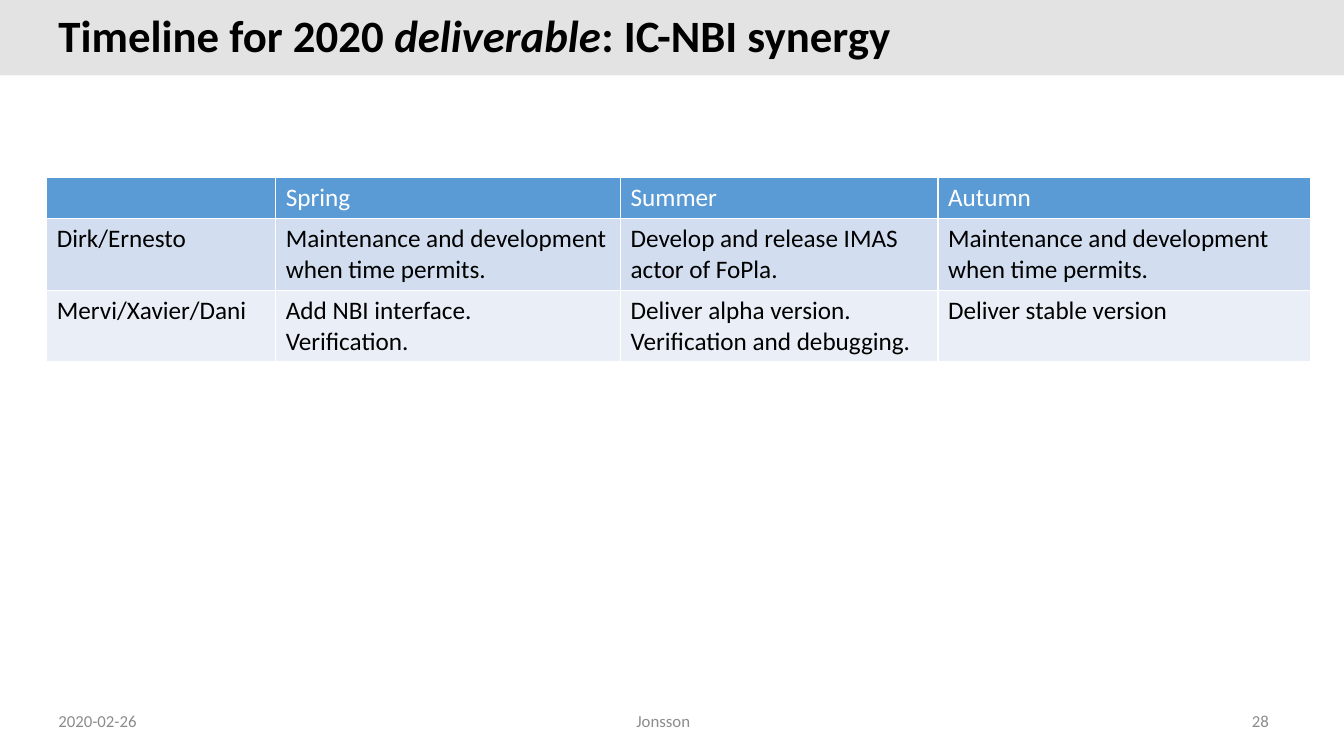
from dataclasses import dataclass

from pptx import Presentation
from pptx.dml.color import RGBColor
from pptx.enum.shapes import MSO_SHAPE
from pptx.enum.text import MSO_ANCHOR, MSO_AUTO_SIZE, PP_ALIGN
from pptx.slide import Slide
from pptx.text.text import Font
from pptx.util import Cm, Pt


@dataclass(frozen=True)
class Theme:
    font: str = "Calibri"
    title_size: int = 32
    table_size: int = 18
    footer_size: int = 12
    black: str = "000000"
    white: str = "FFFFFF"
    grey: str = "8C8C8C"
    band: str = "E3E3E3"
    header: str = "5B9BD5"
    odd_row: str = "D2DEEF"
    even_row: str = "EAEFF7"


@dataclass(frozen=True)
class TableRow:
    height: float
    fill: str
    color: str
    texts: tuple[str, ...]


@dataclass(frozen=True)
class FooterItem:
    text: str
    left: float
    width: float
    alignment: PP_ALIGN


THEME = Theme()
SLIDE_WIDTH, SLIDE_HEIGHT = 33.87, 19.05
HEADER_HEIGHT, BODY_HEIGHT = 1.03, 1.79
MAINTENANCE = "Maintenance and development when time permits."

COLUMN_WIDTHS = (5.77, 8.69, 8.0, 9.4)
TIMELINE = (
    TableRow(HEADER_HEIGHT, THEME.header, THEME.white, ("", "Spring", "Summer", "Autumn")),
    TableRow(BODY_HEIGHT, THEME.odd_row, THEME.black,
             ("Dirk/Ernesto", MAINTENANCE, "Develop and release IMAS actor of FoPla.", MAINTENANCE)),
    TableRow(BODY_HEIGHT, THEME.even_row, THEME.black,
             ("Mervi/Xavier/Dani", "Add NBI interface.\nVerification.",
              "Deliver alpha version.\nVerification and debugging.", "Deliver stable version")),
)
FOOTER = (
    FooterItem("2020-02-26", 1.22, 7.62, PP_ALIGN.LEFT),
    FooterItem("Jonsson", 11.0, 11.43, PP_ALIGN.CENTER),
    FooterItem("28", 24.61, 7.62, PP_ALIGN.RIGHT),
)


def style_font(font: Font, size: int, color: str, bold: bool = False) -> None:
    font.name = THEME.font
    font.size = Pt(size)
    font.bold = bold
    font.color.rgb = RGBColor.from_string(color)


def add_title(slide: Slide) -> None:
    """Fill the title placeholder and lay the grey band behind it."""
    title = slide.shapes.title
    title.left, title.top, title.width, title.height = Cm(1.22), Cm(0.33), Cm(29.31), Cm(1.24)
    frame = title.text_frame
    frame.auto_size = MSO_AUTO_SIZE.NONE
    frame.vertical_anchor = MSO_ANCHOR.MIDDLE
    paragraph = frame.paragraphs[0]
    paragraph.alignment = PP_ALIGN.LEFT
    paragraph.line_spacing = 0.9
    style_font(paragraph.font, THEME.title_size, THEME.black, bold=True)
    for text in ("Timeline for 2020 ", "deliverable", ": IC-NBI synergy"):
        run = paragraph.add_run()
        run.text = text
        run.font.italic = text == "deliverable"

    band = slide.shapes.add_shape(MSO_SHAPE.RECTANGLE, 0, 0, Cm(SLIDE_WIDTH), Cm(1.9))
    band.shadow.inherit = False
    band.fill.solid()
    band.fill.fore_color.rgb = RGBColor.from_string(THEME.band)
    band.line.fill.background()
    title.element.addprevious(band.element)


def add_timeline(slide: Slide) -> None:
    table = slide.shapes.add_table(
        len(TIMELINE), len(COLUMN_WIDTHS), Cm(1.18), Cm(4.48),
        Cm(sum(COLUMN_WIDTHS)), Cm(sum(row.height for row in TIMELINE)),
    ).table
    for column, width in zip(table.columns, COLUMN_WIDTHS):
        column.width = Cm(width)
    for table_row, row in zip(table.rows, TIMELINE):
        table_row.height = Cm(row.height)
        for cell, text in zip(table_row.cells, row.texts):
            cell.fill.solid()
            cell.fill.fore_color.rgb = RGBColor.from_string(row.fill)
            cell.text = text
            for paragraph in cell.text_frame.paragraphs:
                style_font(paragraph.font, THEME.table_size, row.color)


def add_footer_item(slide: Slide, item: FooterItem) -> None:
    box = slide.shapes.add_textbox(Cm(item.left), Cm(17.65), Cm(item.width), Cm(1.02))
    frame = box.text_frame
    frame.word_wrap = True
    frame.vertical_anchor = MSO_ANCHOR.MIDDLE
    frame.text = item.text
    paragraph = frame.paragraphs[0]
    paragraph.alignment = item.alignment
    style_font(paragraph.font, THEME.footer_size, THEME.grey)


def main() -> None:
    presentation = Presentation()
    presentation.slide_width = Cm(SLIDE_WIDTH)
    presentation.slide_height = Cm(SLIDE_HEIGHT)
    slide = presentation.slides.add_slide(presentation.slide_layouts.get_by_name("Title Only"))
    add_title(slide)
    add_timeline(slide)
    for item in FOOTER:
        add_footer_item(slide, item)
    presentation.save("out.pptx")


if __name__ == "__main__":
    main()
